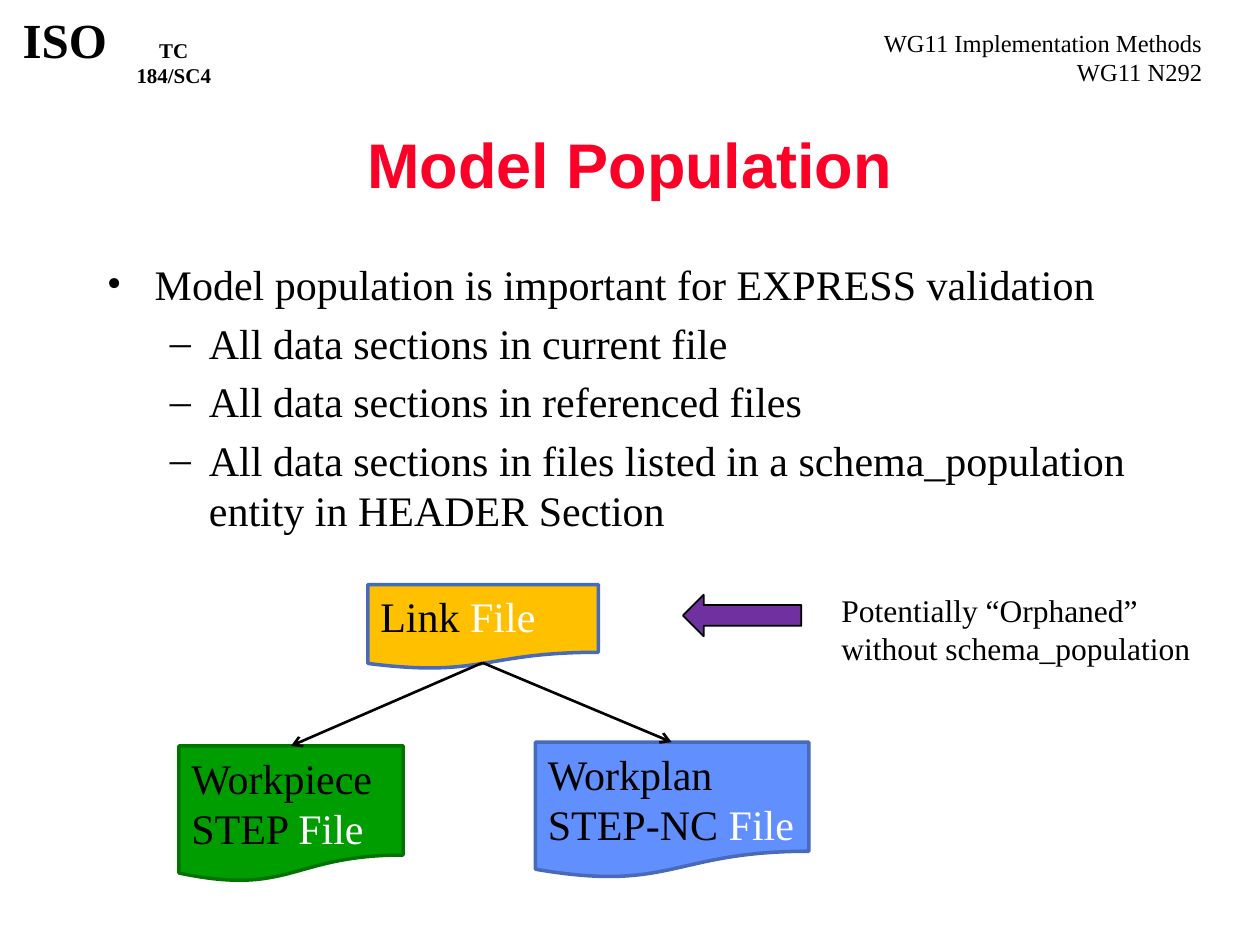
from lxml import etree
from pptx import Presentation
from pptx.dml.color import RGBColor
from pptx.enum.shapes import MSO_CONNECTOR, MSO_SHAPE
from pptx.enum.text import MSO_ANCHOR, PP_ALIGN
from pptx.oxml.ns import qn
from pptx.util import Inches, Pt

DOCUMENT = MSO_SHAPE.FLOWCHART_DOCUMENT
LEFT_ARROW = MSO_SHAPE.LEFT_ARROW
STRAIGHT = MSO_CONNECTOR.STRAIGHT
TOP, MIDDLE = MSO_ANCHOR.TOP, MSO_ANCHOR.MIDDLE
LEFT, CENTER, RIGHT = PP_ALIGN.LEFT, PP_ALIGN.CENTER, PP_ALIGN.RIGHT

BLACK = RGBColor(0x00, 0x00, 0x00)
WHITE = RGBColor(0xFF, 0xFF, 0xFF)
RED = RGBColor(0xFC, 0x01, 0x28)
GREEN = RGBColor(0x00, 0x9D, 0x00)
DARK_GREEN = RGBColor(0x00, 0x74, 0x00)
BLUE = RGBColor(0x61, 0x8F, 0xFD)
DARK_BLUE = RGBColor(0x48, 0x6A, 0xBB)
GOLD = RGBColor(0xFF, 0xC0, 0x00)
PURPLE = RGBColor(0x70, 0x30, 0xA0)


class SlideBuilder:
    body_font = "Times New Roman"
    title_font = "Arial"
    body_size = 24

    def __init__(self, prs):
        self.slide = prs.slides.add_slide(prs.slide_layouts[5])

    def style(self, r, size, color=BLACK, bold=False, font=body_font):
        r.font.name = font
        r.font.size = Pt(size)
        r.font.bold = bold
        r.font.color.rgb = color

    def title(self, text, box):
        sp = self.slide.shapes.title
        sp.left, sp.top, sp.width, sp.height = map(Inches, box)
        tf = sp.text_frame
        tf.text = text
        tf.vertical_anchor = MIDDLE
        p = tf.paragraphs[0]
        p.alignment = CENTER
        self.style(p.runs[0], 36, RED, True, self.title_font)

    def text(self, lines, box, size, align=LEFT, bold=False):
        tf = self.slide.shapes.add_textbox(*map(Inches, box)).text_frame
        tf.word_wrap = True
        tf.text = "\n".join(lines)
        for p in tf.paragraphs:
            p.alignment = align
            for r in p.runs:
                self.style(r, size, bold=bold)
        return tf

    def bullets(self, items, box):
        tf = self.text([text for _, text in items], box, self.body_size)
        for p, (level, _) in zip(tf.paragraphs, items):
            char, margin, indent = (("•", 0.38, -0.38), ("–", 0.81, -0.31))[level]
            p.level = level
            p.space_before = Pt(0.2 * self.body_size)
            pPr = p._p.get_or_add_pPr()
            pPr.set("marL", str(Inches(margin)))
            pPr.set("indent", str(Inches(indent)))
            etree.SubElement(pPr, qn("a:buFont")).set("typeface", self.body_font)
            etree.SubElement(pPr, qn("a:buChar")).set("char", char)

    def shape(self, kind, box, fill, line, width):
        sp = self.slide.shapes.add_shape(kind, *map(Inches, box))
        sp.shadow.inherit = False
        sp.fill.solid()
        sp.fill.fore_color.rgb = fill
        sp.line.color.rgb = line
        sp.line.width = Pt(width)
        return sp

    def document(self, lines, box, fill, line):
        tf = self.shape(DOCUMENT, box, fill, line, 2).text_frame
        tf.word_wrap = True
        tf.vertical_anchor = TOP
        tf.text = "\n".join(lines)
        for p in tf.paragraphs:
            p.alignment = LEFT
            for r in p.runs:
                self.style(r, self.body_size)
        r = p.add_run()
        r.text = "File"
        self.style(r, self.body_size, WHITE)

    def arrow(self, start, end):
        cn = self.slide.shapes.add_connector(STRAIGHT, *map(Inches, start + end))
        cn.line.color.rgb = BLACK
        cn.line.width = Pt(1.5)
        ln = cn.line._get_or_add_ln()
        etree.SubElement(ln, qn("a:tailEnd")).set("type", "arrow")
        etree.SubElement(cn._element.spPr, qn("a:effectLst"))


def main():
    prs = Presentation()
    prs.slide_width, prs.slide_height = Inches(10), Inches(7.5)
    s = SlideBuilder(prs)

    s.text(["WG11 Implementation Methods", "WG11 N292"],
           (6.33, 0.17, 3.31, 0.81), 14, RIGHT)
    s.text(["ISO"], (0.03, 0.03, 0.97, 0.56), 28, CENTER, True)
    s.text(["TC 184/SC4"], (0.85, 0.25, 1.06, 0.3), 12, CENTER, True)
    s.title("Model Population", (0.75, 0.67, 8.5, 1.25))
    s.bullets([
        (0, "Model population is important for EXPRESS validation"),
        (1, "All data sections in current file"),
        (1, "All data sections in referenced files"),
        (1, "All data sections in files listed in a schema_population "
            "entity in HEADER Section"),
    ], (0.75, 2, 8.5, 2.42))

    s.document(["Workpiece STEP "], (1.42, 5.92, 1.78, 1.08), GREEN, DARK_GREEN)
    s.document(["Workplan", "STEP-NC "], (4.25, 5.89, 2.17, 1.08), BLUE, DARK_BLUE)
    s.document(["Link "], (2.92, 4.64, 1.83, 0.67), GOLD, DARK_BLUE)
    for end in ((2.31, 5.92), (5.33, 5.89)):
        s.arrow((3.83, 5.26), end)
    s.shape(LEFT_ARROW, (5.42, 4.72, 0.94, 0.33), PURPLE, BLACK, 1)
    s.text(["Potentially “Orphaned” without schema_population"],
           (6.58, 4.64, 3.17, 0.71), 18)

    prs.save("out.pptx")


if __name__ == "__main__":
    main()
